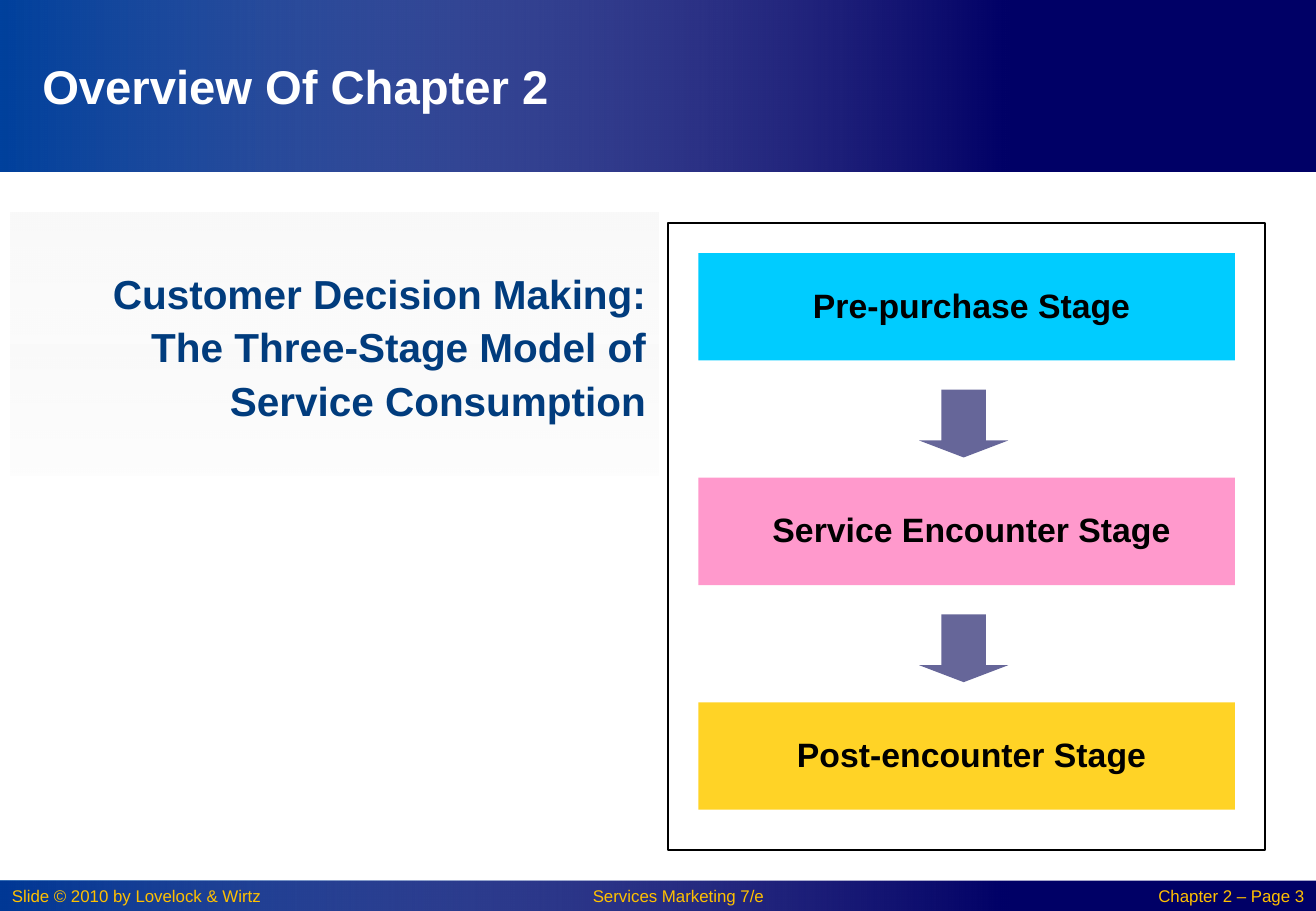
from lxml import etree
from pptx import Presentation
from pptx.dml.color import RGBColor
from pptx.enum.shapes import MSO_SHAPE
from pptx.enum.text import MSO_ANCHOR, PP_ALIGN
from pptx.oxml.ns import qn
from pptx.util import Inches, Pt

RECT, DOWN_ARROW = MSO_SHAPE.RECTANGLE, MSO_SHAPE.DOWN_ARROW
MIDDLE = MSO_ANCHOR.MIDDLE
LEFT, CENTER, RIGHT = PP_ALIGN.LEFT, PP_ALIGN.CENTER, PP_ALIGN.RIGHT

COLS, ROWS = 130, 90
UNIT = 1 / 12
COLORS = {
    "navy": "000066", "blue": "0152AB", "white": "FFFFFF", "black": "000000",
    "gold": "FFC000", "heading": "013C7D", "pale": "F8F8F8", "paler": "F4F4F4",
    "cyan": "00CCFF", "pink": "FF99CC", "yellow": "FFCC00", "arrow": "666699",
}
STAGES = [
    ("Pre-purchase Stage", "cyan", 100),
    ("Service Encounter Stage", "pink", 100),
    ("Post-encounter Stage", "yellow", 85),
]


def rgb(name):
    return RGBColor.from_string(COLORS[name])


def grid(*box):
    return [Inches(n * UNIT) for n in box]


def set_opacity(sp, *percents):
    colors = sp._element.spPr.iter(qn("a:srgbClr"))
    for color, percent in zip(colors, percents):
        if percent < 100:
            etree.SubElement(color, qn("a:alpha"), val=str(percent * 1000))


def add_block(s, box, color, opacity=100, kind=RECT):
    sp = s.shapes.add_shape(kind, *grid(*box))
    sp.shadow.inherit = False
    sp.line.fill.background()
    sp.fill.solid()
    sp.fill.fore_color.rgb = rgb(color)
    set_opacity(sp, opacity)
    return sp


def add_gradient(s, box, stops, angle):
    sp = add_block(s, box, stops[0][0])
    sp.fill.gradient()
    sp.fill.gradient_angle = angle
    for stop, (color, _) in zip(sp.fill.gradient_stops, stops):
        stop.color.rgb = rgb(color)
    set_opacity(sp, *(opacity for _, opacity in stops))
    return sp


def write(sp, text, size, color, align, bold=False, spacing=1.0):
    tf = sp.text_frame
    tf.word_wrap = True
    tf.vertical_anchor = MIDDLE
    p = tf.paragraphs[0]
    p.text = text
    p.alignment = align
    p.line_spacing = spacing
    p.font.name = "Arial"
    p.font.size = Pt(size)
    p.font.bold = bold
    p.font.color.rgb = rgb(color)


def add_band(s, box, opacity):
    x, y, w, h = box
    add_block(s, box, "navy")
    add_gradient(s, (x, y, w * 10 / 13, h), [("blue", opacity), ("white", 0)], 0)


def add_header(s, box):
    x, y, w, h = box
    add_band(s, box, 80)
    title = s.shapes.add_textbox(*grid(x + 3, y + 3, 84, h - 6))
    write(title, "Overview Of Chapter 2", 28, "white", LEFT, True)


def add_footer(s, box):
    x, y, w, h = box
    add_band(s, box, 69)
    for text, left, width, align in [
        ("Slide © 2010 by Lovelock & Wirtz", 0, 31, LEFT),
        ("Services Marketing 7/e", 51, 32, CENTER),
        ("Chapter 2 – Page 3", w - 21, 21, RIGHT),
    ]:
        label = s.shapes.add_textbox(*grid(x + left, y, width, h))
        write(label, text, 10, "gold", align)


def add_topic(s, box):
    sp = add_gradient(s, box, [("pale", 80), ("paler", 16)], 270)
    text = "Customer Decision Making:\vThe Three-Stage Model of Service Consumption"
    write(sp, text, 24, "heading", RIGHT, True, 1.1)


def add_stages(s, box):
    x, y, w, h = box
    frame = add_block(s, box, "white")
    frame.line.color.rgb = rgb("black")
    frame.line.width = Pt(1)
    pad, pitch, stage_h = 3, 22.2, 10.6
    arrow_w, arrow_h = 8.8, 6.7
    for i, (text, color, opacity) in enumerate(STAGES):
        top = y + pad + i * pitch
        sp = add_block(s, (x + pad, top, w - 2 * pad, stage_h), color, opacity)
        sp.text_frame.margin_left = Inches(0.18)
        write(sp, text, 20, "black", CENTER, True, 0.95)
        if i < len(STAGES) - 1:
            arrow_x = x + (w - arrow_w) / 2 - 0.3
            arrow = (arrow_x, top + stage_h + 2.9, arrow_w, arrow_h)
            sp = add_block(s, arrow, "arrow", kind=DOWN_ARROW)
            sp.adjustments[0] = 0.5
            sp.adjustments[1] = 0.25


def main():
    prs = Presentation()
    prs.slide_width, prs.slide_height = grid(COLS, ROWS)
    s = prs.slides.add_slide(prs.slide_layouts[6])
    add_footer(s, (0, ROWS - 3, COLS, 3))
    add_header(s, (0, 0, COLS, 17))
    add_stages(s, (66, 22, 59, 62))
    add_topic(s, (1, 21, 64, 26))
    prs.save("out.pptx")


if __name__ == "__main__":
    main()
